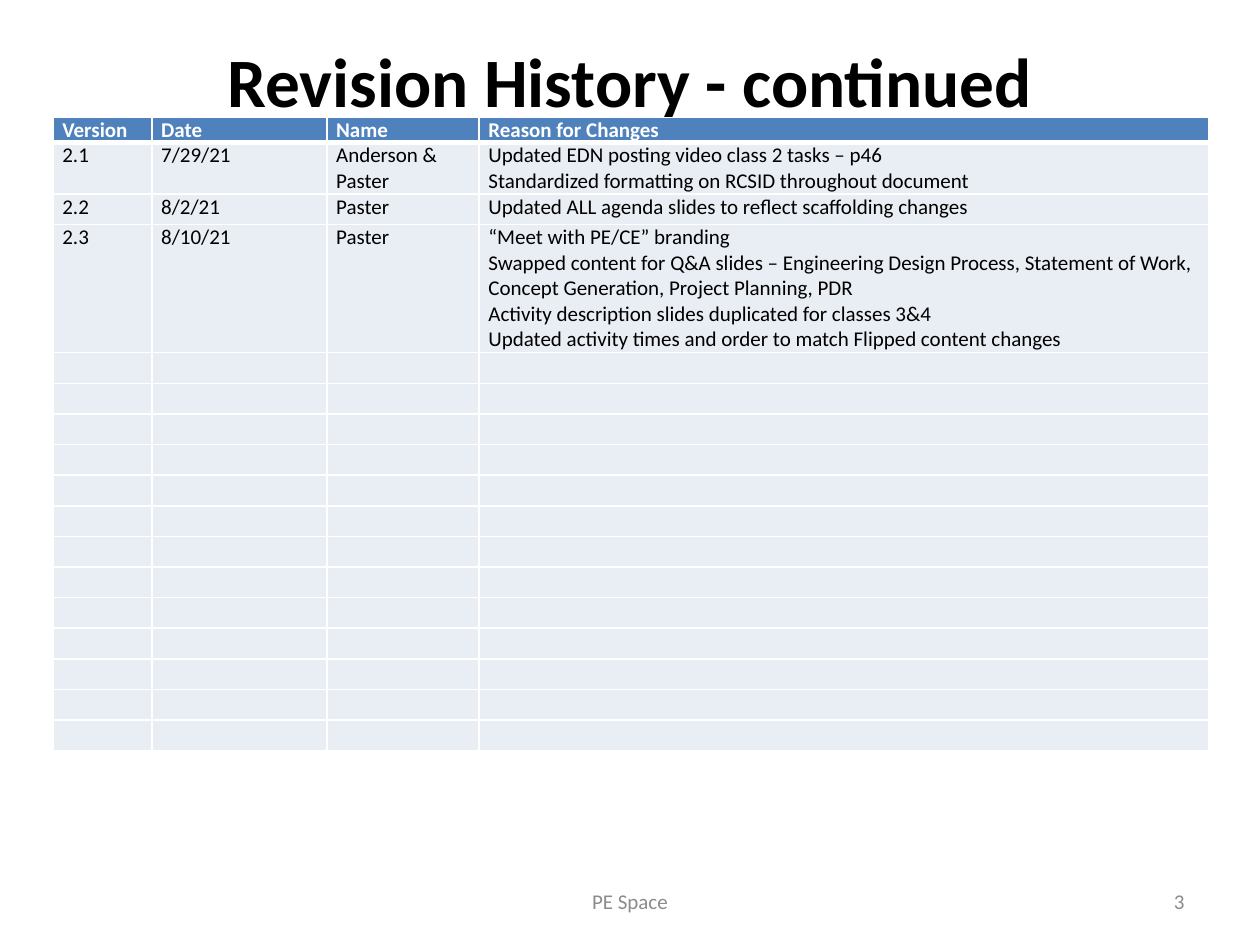
from lxml import etree
from pptx import Presentation
from pptx.dml.color import RGBColor
from pptx.enum.text import MSO_ANCHOR, PP_ALIGN
from pptx.oxml.ns import qn
from pptx.util import Pt

LEFT, CENTER, RIGHT = PP_ALIGN.LEFT, PP_ALIGN.CENTER, PP_ALIGN.RIGHT
TOP, MIDDLE = MSO_ANCHOR.TOP, MSO_ANCHOR.MIDDLE
COLORS = {
    "text": "000000",
    "header": "4F81BD",
    "body": "E9EDF4",
    "white": "FFFFFF",
    "footer": "8C8C8C",
}
TEXT_SIZE = 12


def write_text(frame, text, size=TEXT_SIZE, color="text", bold=False, align=LEFT):
    """Write each line of text as a paragraph of its own."""
    for index, line in enumerate(text.split("\n")):
        paragraph = frame.add_paragraph() if index else frame.paragraphs[0]
        paragraph.alignment = align
        run = paragraph.add_run()
        run.text = line
        run.font.name = "Calibri"
        run.font.size = Pt(size)
        run.font.bold = bold
        run.font.color.rgb = RGBColor.from_string(COLORS[color])


def set_borders(cell, top, bottom):
    properties = cell._tc.get_or_add_tcPr()
    widths = {"a:lnL": 1, "a:lnR": 1, "a:lnT": top, "a:lnB": bottom}
    for index, (tag, width) in enumerate(widths.items()):
        line = etree.Element(qn(tag), w=str(Pt(width)))
        fill = etree.SubElement(line, qn("a:solidFill"))
        etree.SubElement(fill, qn("a:srgbClr"), val=COLORS["white"])
        properties.insert(index, line)


presentation = Presentation()
presentation.slide_width, presentation.slide_height = Pt(720), Pt(540)
slide = presentation.slides.add_slide(presentation.slide_layouts[6])

# Title and footer: text, position, vertical inset, anchor, format
text_boxes = [
    ("Revision History - continued", (36, 21.6, 648, 90), 0, TOP,
     {"size": 39.6, "bold": True, "align": CENTER}),
    ("PE Space", (246, 500.5, 228, 28.75), 3.6, MIDDLE,
     {"color": "footer", "align": CENTER}),
    ("3", (516, 500.5, 168, 28.75), 3.6, MIDDLE,
     {"color": "footer", "align": RIGHT}),
]
for text, position, inset, anchor, text_format in text_boxes:
    frame = slide.shapes.add_textbox(*map(Pt, position)).text_frame
    frame.word_wrap = True
    frame.vertical_anchor = anchor
    frame.margin_top = frame.margin_bottom = Pt(inset)
    write_text(frame, text, **text_format)

# Revision table
revisions = [
    ("Version", "Date", "Name", "Reason for Changes"),
    ("2.1", "7/29/21", "Anderson & Paster",
     "Updated EDN posting video class 2 tasks – p46\n"
     "Standardized formatting on RCSID throughout document"),
    ("2.2", "8/2/21", "Paster",
     "Updated ALL agenda slides to reflect scaffolding changes"),
    ("2.3", "8/10/21", "Paster",
     "“Meet with PE/CE” branding\n"
     "Swapped content for Q&A slides – Engineering Design Process, "
     "Statement of Work, Concept Generation, Project Planning, PDR\n"
     "Activity description slides duplicated for classes 3&4\n"
     "Updated activity times and order to match Flipped content changes"),
]
EMPTY_ROWS = 13
revisions += [("",) * 4] * EMPTY_ROWS
column_widths = [56.5, 100, 87, 416.75]
row_heights = [14.6, 29.3, 17.5, 73.2] + [17.5] * EMPTY_ROWS

table = slide.shapes.add_table(
    len(row_heights), len(column_widths), Pt(30.25), Pt(67),
    Pt(sum(column_widths)), Pt(sum(row_heights))).table
for column, width in zip(table.columns, column_widths):
    column.width = Pt(width)
for row_index, (row, height, texts) in enumerate(
        zip(table.rows, row_heights, revisions)):
    row.height = Pt(height)
    is_header = row_index == 0
    for cell, text in zip(row.cells, texts):
        cell.margin_left = cell.margin_right = Pt(5.4)
        cell.margin_top = cell.margin_bottom = 0
        cell.fill.solid()
        cell.fill.fore_color.rgb = RGBColor.from_string(
            COLORS["header" if is_header else "body"])
        set_borders(cell, top=3 if row_index == 1 else 1,
                    bottom=3 if is_header else 1)
        if text:
            write_text(cell.text_frame, text, bold=is_header,
                       color="white" if is_header else "text")
        else:
            # The end mark's size keeps an empty row from growing
            etree.SubElement(cell.text_frame.paragraphs[0]._p,
                             qn("a:endParaRPr"), sz=str(TEXT_SIZE * 100))

presentation.save("out.pptx")
